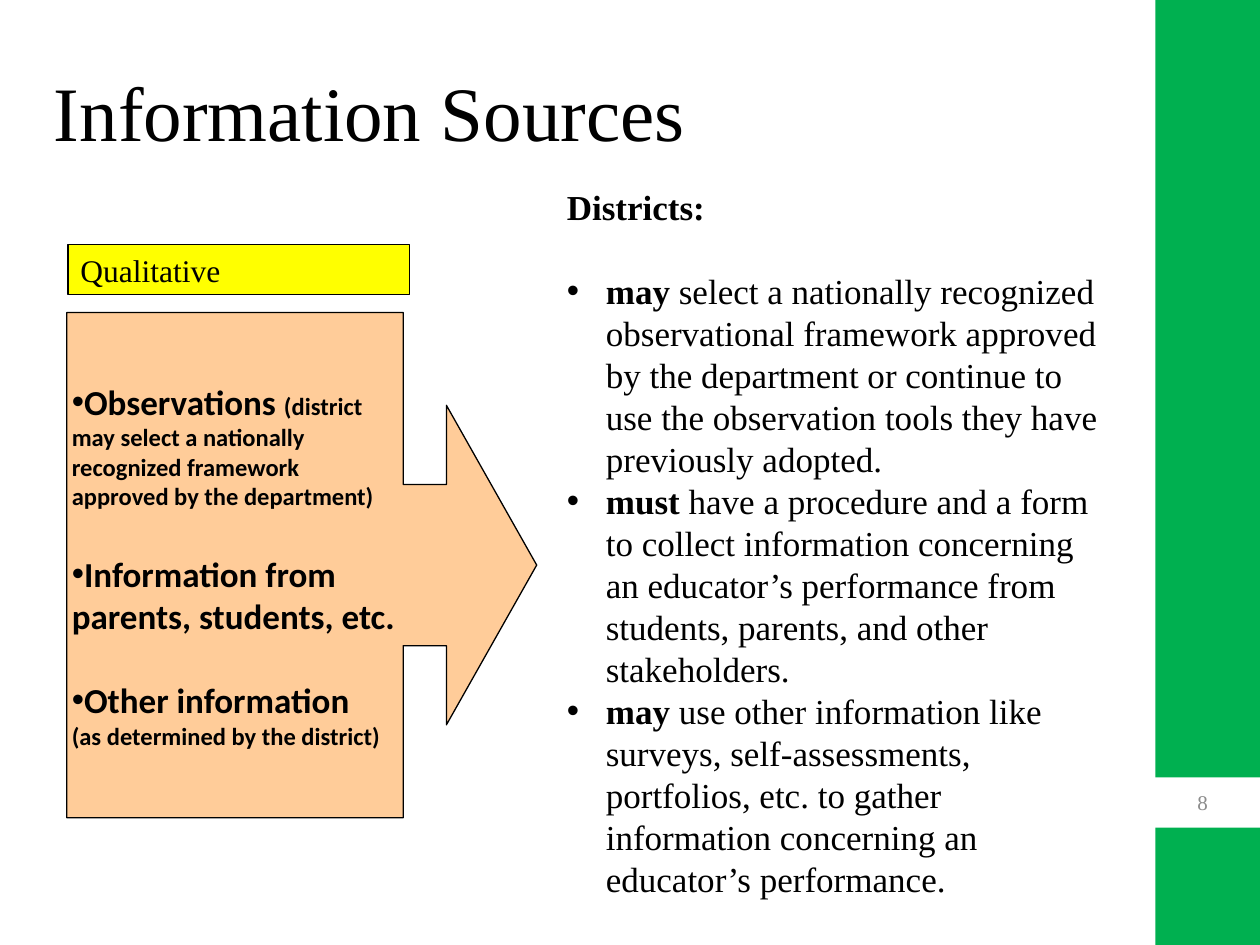
from pptx import Presentation
from pptx.dml.color import RGBColor as RGB
from pptx.enum.shapes import MSO_SHAPE as Shape
from pptx.enum.text import MSO_ANCHOR as Anchor, PP_ALIGN as Align
from pptx.util import Inches, Pt
from lxml.etree import SubElement
from pptx.oxml.ns import qn

THEME = {
    "serif": "Times New Roman", "sans": "Calibri",
    "ink": "000000", "gray": "8C8C8C", "white": "FFFFFF",
    "green": "00B050", "yellow": "FFFF00", "peach": "FFCC99",
    "title": 44, "body": 20, "label": 18, "small": 14, "page": 12,
}
TITLE = "Information Sources"
LABEL = "Qualitative"
PAGE = "8"
HEAD = "Districts:"
RULES = [
    ("may", " select a nationally recognized observational framework approved "
     "by the department or continue to use the observation tools they have "
     "previously adopted."),
    ("must", " have a procedure and a form to collect information concerning an "
     "educator’s performance from students, parents, and other stakeholders."),
    ("may", " use other information like surveys, self-assessments, portfolios, "
     "etc. to gather information concerning an educator’s performance."),
]
# Each source: (bulleted, [(text, size), ...])
SOURCES = [
    (True, [("Observations ", "body"),
            ("(district may select a nationally recognized framework "
             "approved by the department)", "small")]),
    (True, [("Information from parents, students, etc.", "body")]),
    (True, [("Other information", "body")]),
    (False, [("(as determined by the district)", "small")]),
]
LINE = Pt(24)


def color(name):
    return RGB.from_string(THEME[name])


def style(font, size, face="serif", ink="ink", bold=None):
    font.name, font.size = THEME[face], Pt(THEME[size])
    font.color.rgb, font.bold = color(ink), bold


def place(box):
    return [Inches(n) for n in box]


def add_box(slide, kind, box, fill, edge=False):
    shape = slide.shapes.add_shape(kind, *place(box))
    shape.shadow.inherit = False
    shape.fill.solid()
    shape.fill.fore_color.rgb = color(fill)
    if edge:
        shape.line.color.rgb = color("ink")
        shape.line.width = Pt(0.75)
    else:
        shape.line.fill.background()
    return shape


def add_text(slide, box):
    frame = slide.shapes.add_textbox(*place(box)).text_frame
    frame.word_wrap = True
    return frame


def add_bullet(para, indent=0):
    """Put a round bullet on the paragraph, hung by indent inches."""
    props = para._p.get_or_add_pPr()
    props.set("marL", str(Inches(indent)))
    props.set("indent", str(-Inches(indent)))
    SubElement(props, qn("a:buFont")).set("typeface", "Arial")
    SubElement(props, qn("a:buChar")).set("char", "•")


def write(frame, text, size, ink="ink", align=Align.LEFT, anchor=Anchor.MIDDLE):
    frame.vertical_anchor = anchor
    para = frame.paragraphs[0]
    para.text, para.alignment = text, align
    style(para.font, size, ink=ink)


def add_rules(slide):
    frame = add_text(slide, (4.4, 1.42, 4.42, 5.82))
    para = frame.paragraphs[0]
    para.text, para.line_spacing = HEAD, LINE
    style(para.font, "body", bold=True)
    for i, parts in enumerate(RULES):
        para = frame.add_paragraph()
        para.line_spacing = LINE
        if i == 0:
            para.space_before = LINE
        add_bullet(para, 0.31)
        style(para.font, "body")
        for text, bold in zip(parts, (True, False)):
            run = para.add_run()
            run.text, run.font.bold = text, bold


def add_sources(slide):
    arrow = add_box(slide, Shape.RIGHT_ARROW_CALLOUT, (0.53, 2.48, 3.73, 4.01),
                    "peach", edge=True)
    for i, value in enumerate((0.343, 0.34, 0.192, 0.716)):
        arrow.adjustments[i] = value
    frame = arrow.text_frame
    frame.word_wrap, frame.vertical_anchor = True, Anchor.MIDDLE
    frame.margin_left = frame.margin_right = Inches(0.04)
    frame.margin_top = frame.margin_bottom = Inches(0.04)
    for i, (marked, runs) in enumerate(SOURCES):
        para = frame.add_paragraph() if i else frame.paragraphs[0]
        para.alignment = Align.LEFT
        if marked:
            if i:
                para.space_before = LINE
            add_bullet(para)
        style(para.font, runs[0][1], "sans", bold=True)
        for text, size in runs:
            run = para.add_run()
            run.text, run.font.size = text, Pt(THEME[size])


def main():
    deck = Presentation()
    deck.slide_width, deck.slide_height = Inches(10), Inches(7.5)
    slide = deck.slides.add_slide(deck.slide_layouts[6])
    add_box(slide, Shape.RECTANGLE, (9.17, 0, 0.83, 7.5), "green")
    write(add_text(slide, (0.33, 0.25, 8.73, 1.25)), TITLE, "title")
    add_rules(slide)
    label = add_box(slide, Shape.RECTANGLE, (0.54, 1.94, 2.71, 0.4), "yellow", edge=True)
    write(label.text_frame, LABEL, "label", anchor=Anchor.TOP)
    add_sources(slide)
    badge = add_box(slide, Shape.RECTANGLE, (9.08, 6.17, 0.93, 0.4), "white")
    write(badge.text_frame, PAGE, "page", "gray", Align.CENTER)
    deck.save("out.pptx")


if __name__ == "__main__":
    main()
